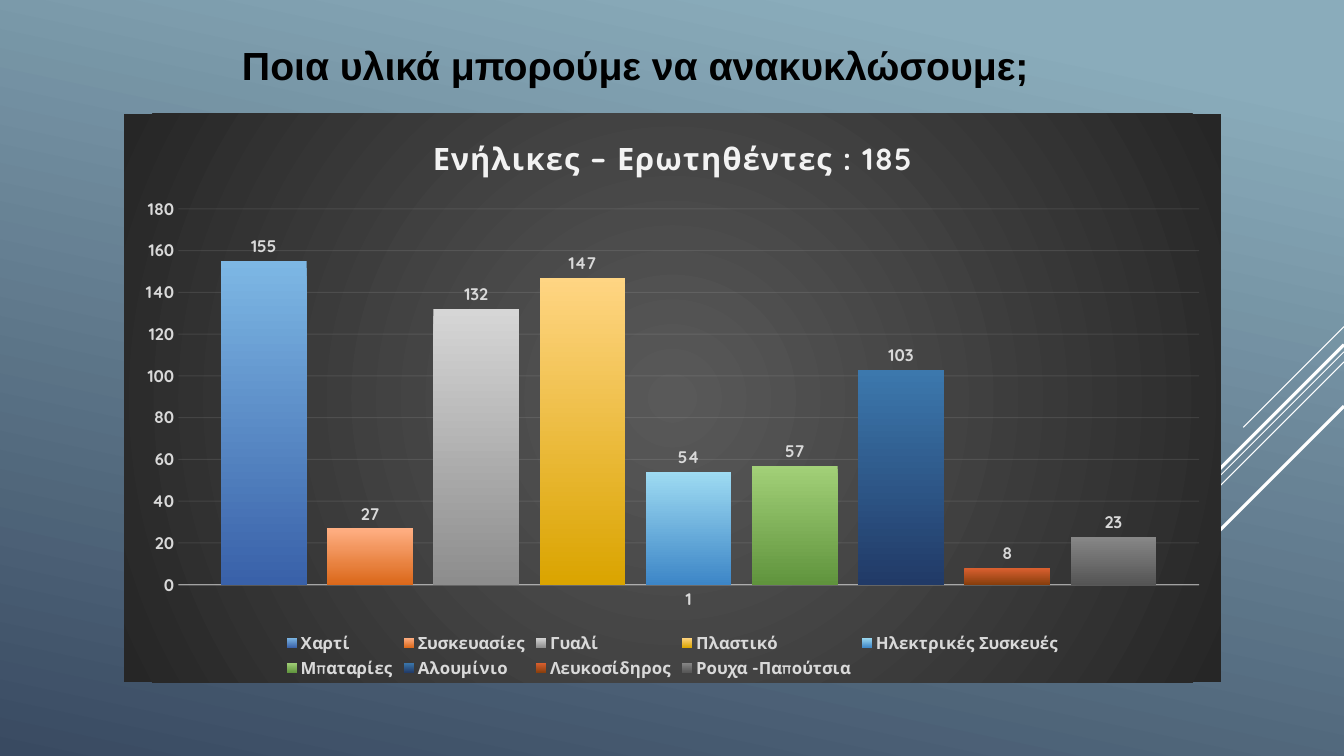
from pptx import Presentation
from pptx.chart.data import CategoryChartData
from pptx.dml.color import RGBColor
from pptx.enum.chart import XL_CHART_TYPE, XL_LABEL_POSITION, XL_LEGEND_POSITION, XL_TICK_MARK
from pptx.enum.shapes import MSO_CONNECTOR
from pptx.enum.text import MSO_ANCHOR, PP_ALIGN
from pptx.oxml import parse_xml
from pptx.oxml.ns import nsdecls, qn
from pptx.oxml.xmlchemy import OxmlElement
from pptx.util import Inches, Pt

COLORS = {
    "heading": "000000", "chart_title": "F2F2F2", "labels": "D9D9D9",
    "lines": "F2F2F2", "rays": "FFFFFF",
    "sky": "8AACBB", "dusk": "394A61", "panel": "595959", "panel_edge": "262626",
}
# Material, answers, top and bottom colour of its column
MATERIALS = [
    ("Χαρτί", 155, "7DB7E4", "3961A9"),
    ("Συσκευασίες", 27, "FFAF83", "DB681A"),
    ("Γυαλί", 132, "D6D6D6", "8D8D8D"),
    ("Πλαστικό", 147, "FFD583", "DAA400"),
    ("Ηλεκτρικές Συσκευές", 54, "9EDBF2", "3D86C7"),
    ("Μπαταρίες", 57, "A2D078", "60943D"),
    ("Αλουμίνιο", 103, "3C78AD", "213A67"),
    ("Λευκοσίδηρος", 8, "DB6030", "873E0C"),
    ("Ρουχα -Παπούτσια", 23, "878787", "555555"),
]
# Diagonal rays: height at the right edge, horizontal run, line width
RAYS = [(3.24, 1, 0.75), (3.49, 3.26, 0.75), (3.59, 2.07, 0.75),
        (3.42, 1.91, 2.25), (4.03, 1.39, 2.25)]
LINEAR = '<a:lin ang="{}" scaled="0"/>'
CIRCLE = '<a:path path="circle"><a:fillToRect l="50000" t="50000" r="50000" b="50000"/></a:path>'


def gradient(start, end, direction, first=0):
    return parse_xml(
        f'<a:gradFill {nsdecls("a")} rotWithShape="1"><a:gsLst>'
        f'<a:gs pos="{first * 1000}"><a:srgbClr val="{start}"/></a:gs>'
        f'<a:gs pos="100000"><a:srgbClr val="{end}"/></a:gs>'
        f'</a:gsLst>{direction}</a:gradFill>')


def swap_fill(properties, fill):
    properties.replace(properties.find(qn("a:solidFill")), fill)


def style_font(font, name, size, color):
    for attribute, value in {"name": name, "size": Pt(size), "bold": True}.items():
        setattr(font, attribute, value)
    font.color.rgb = RGBColor.from_string(color)


def style_line(line, color, width, opacity=100):
    line.color.rgb = RGBColor.from_string(color)
    line.width = Pt(width)
    if opacity < 100:
        alpha = OxmlElement("a:alpha")
        alpha.set("val", str(opacity * 1000))
        line.fill._xPr.find(".//" + qn("a:srgbClr")).append(alpha)


def add_background(slide):
    slide.background.fill.solid()
    swap_fill(slide.element.find(".//" + qn("p:bgPr")),
              gradient(COLORS["sky"], COLORS["dusk"], LINEAR.format(102 * 60000), 10))


def add_rays(slide, right):
    for top, run, width in RAYS:
        ray = slide.shapes.add_connector(
            MSO_CONNECTOR.STRAIGHT, Inches(right), Inches(top),
            Inches(right - run), Inches(top + run))
        style_line(ray.line, COLORS["rays"], width)
        ray.element.spPr.append(OxmlElement("a:effectLst"))


def add_heading(slide, left, top, width, height):
    heading = slide.shapes.title
    box = {"left": left, "top": top, "width": width, "height": height}
    for attribute, value in box.items():
        setattr(heading, attribute, Inches(value))
    frame = heading.text_frame
    frame.text = "Ποια υλικά μπορούμε να ανακυκλώσουμε;"
    frame.word_wrap = False
    frame.vertical_anchor = MSO_ANCHOR.TOP
    frame.paragraphs[0].alignment = PP_ALIGN.LEFT
    style_font(frame.paragraphs[0].runs[0].font, "Arial", 28, COLORS["heading"])


def add_answers_chart(slide, left, top, width, height):
    answers = CategoryChartData()
    answers.categories = ["1"]
    for material, count, *_ in MATERIALS:
        answers.add_series(material, [count])
    chart = slide.shapes.add_chart(
        XL_CHART_TYPE.COLUMN_CLUSTERED, Inches(left), Inches(top),
        Inches(width), Inches(height), answers).chart
    style_font(chart.font, "Quicksand", 10, COLORS["rays"])

    # Dark panel
    panel = OxmlElement("c:spPr")
    panel.append(gradient(COLORS["panel"], COLORS["panel_edge"], CIRCLE))
    chart.element.find(qn("c:chart")).addnext(panel)

    # Chart title
    chart.has_title = True
    title = chart.chart_title.text_frame
    title.text = "Ενήλικες – Ερωτηθέντες : 185"
    title_font = title.paragraphs[0].runs[0].font
    style_font(title_font, "Quicksand", 22, COLORS["chart_title"])
    title_font._element.set("spc", "100")
    chart.chart_title.include_in_layout = False

    # Columns and their values
    plot = chart.plots[0]
    plot.gap_width, plot.overlap, plot.vary_by_categories = 100, -24, False
    for series, (_, _, light, dark) in zip(plot.series, MATERIALS):
        series.format.fill.solid()
        swap_fill(series._element.find(qn("c:spPr")),
                  gradient(light, dark, LINEAR.format(90 * 60000)))
        labels = series.data_labels
        labels.show_value = True
        labels.position = XL_LABEL_POSITION.OUTSIDE_END
        style_font(labels.font, "Quicksand", 12, COLORS["labels"])

    # Axes
    for axis in (chart.category_axis, chart.value_axis):
        axis.major_tick_mark = axis.minor_tick_mark = XL_TICK_MARK.NONE
        style_font(axis.tick_labels.font, "Quicksand", 12, COLORS["labels"])
    style_line(chart.category_axis.format.line, COLORS["lines"], 1, 54)
    counts = chart.value_axis
    scale = {"minimum_scale": 0, "maximum_scale": 180, "major_unit": 20}
    for attribute, value in scale.items():
        setattr(counts, attribute, value)
    counts.format.line.fill.background()
    style_line(counts.major_gridlines.format.line, COLORS["lines"], 0.75, 10)

    # Legend
    chart.has_legend = True
    chart.legend.position = XL_LEGEND_POSITION.BOTTOM
    chart.legend.include_in_layout = False
    style_font(chart.legend.font, "Quicksand", 12, COLORS["labels"])


def main():
    presentation = Presentation()
    presentation.slide_width, presentation.slide_height = Inches(13.33), Inches(7.5)
    slide = presentation.slides.add_slide(presentation.slide_layouts[5])
    add_background(slide)
    add_rays(slide, 13.33)
    add_answers_chart(slide, 1.23, 1.13, 10.88, 5.64)
    add_heading(slide, 2.3, 0.36, 8.22, 0.57)
    presentation.save("out.pptx")


if __name__ == "__main__":
    main()
